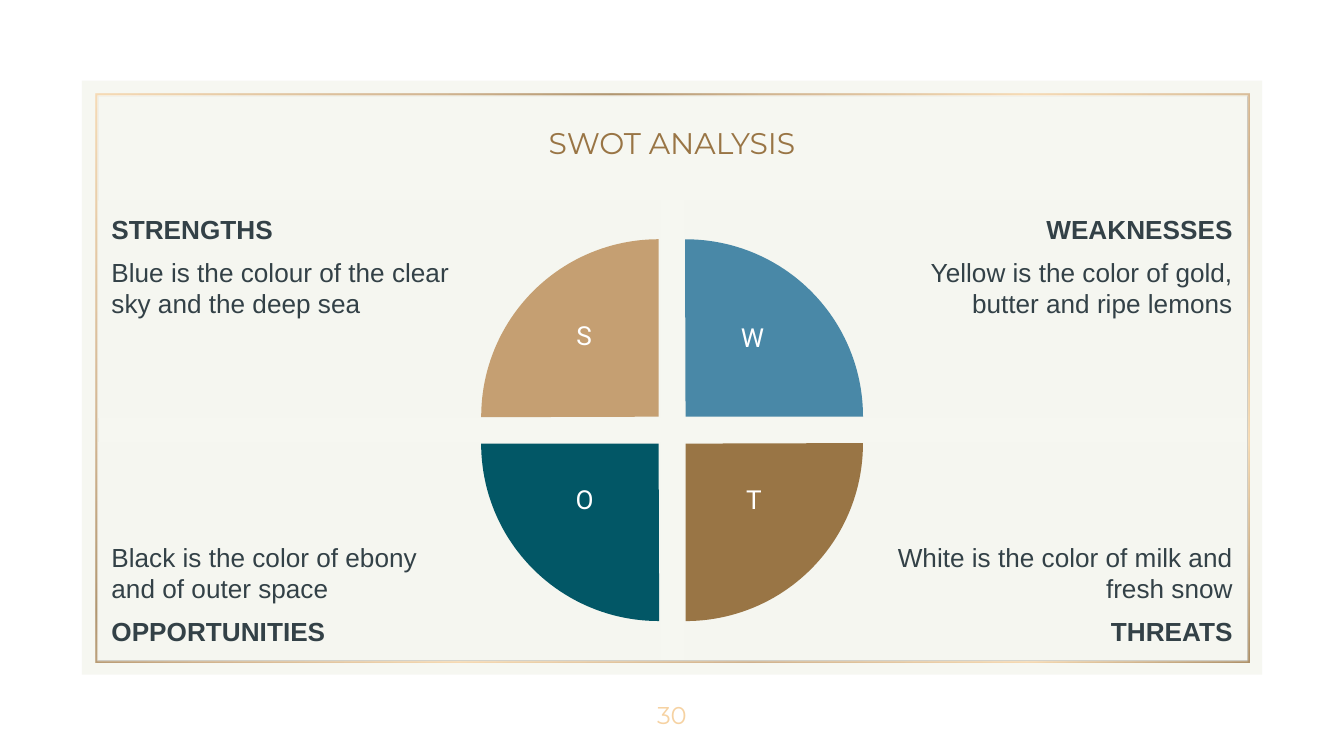
from lxml import etree
from pptx import Presentation, util as u
from pptx.dml.color import RGBColor
from pptx.enum import shapes, text
from pptx.oxml import ns

Pt = u.Pt
SHAPE = shapes.MSO_SHAPE
ALIGN = text.PP_ALIGN
ANCHOR = text.MSO_ANCHOR
COLORS = {"paper": "F5F6F0", "cream": "F6D2A2", "gold": "C59F72", "bronze": "997545",
          "blue": "4988A7", "teal": "025766", "ink": "334147", "white": "FFFFFF"}


def add_box(kind, left, top, width, height, color, alpha=100):
    """Add a borderless filled shape; alpha is its opacity in percent."""
    box = page.shapes.add_shape(kind, Pt(left), Pt(top), Pt(width), Pt(height))
    box.shadow.inherit = False
    box.line.fill.background()
    box.fill.solid()
    box.fill.fore_color.rgb = RGBColor.from_string(COLORS[color])
    if alpha < 100:
        tint = box.fill._xPr.find(".//" + ns.qn("a:srgbClr"))
        etree.SubElement(tint, ns.qn("a:alpha"), val=str(alpha * 1000))
    return box


def write(box, lines, font, size, color, align, anchor, insets, wrap=True):
    """Fill a box with (text, bold) lines."""
    frame = box.text_frame
    frame.word_wrap = wrap
    frame.vertical_anchor = anchor
    for side, inset in zip(("left", "top", "right", "bottom"), insets):
        setattr(frame, "margin_" + side, Pt(inset))
    for i, (words, bold) in enumerate(lines):
        para = frame.add_paragraph() if i else frame.paragraphs[0]
        para.alignment = align
        if i:
            para.space_before = para.space_after = Pt(6)
        span = para.add_run()
        span.text = words
        for name, value in {"name": font, "size": Pt(size), "bold": bold}.items():
            setattr(span.font, name, value)
        span.font.color.rgb = RGBColor.from_string(COLORS[color])


deck = Presentation()
deck.slide_width, deck.slide_height = Pt(720), Pt(405)
page = deck.slides.add_slide(deck.slide_layouts[6])

# Panel with a thin gold border
add_box(SHAPE.RECTANGLE, 43.9, 43.2, 632.2, 318.2, "paper", 87)
border = add_box(SHAPE.FRAME, 51, 50.2, 618.2, 304.6, "gold")
border.adjustments[0] = 0.004
border.fill.gradient()
gradient = border.fill._xPr.find(ns.qn("a:gradFill"))
for child in list(gradient):
    gradient.remove(child)
stops = etree.SubElement(gradient, ns.qn("a:gsLst"))
for place, color in [(0, "cream"), (20, "gold"), (30, "bronze"), (39, "gold"),
                     (54, "cream"), (71, "gold"), (87, "cream"), (100, "bronze")]:
    stop = etree.SubElement(stops, ns.qn("a:gs"), pos=str(place * 1000))
    tint = etree.SubElement(stop, ns.qn("a:srgbClr"), val=COLORS[color])
    etree.SubElement(tint, ns.qn("a:alpha"), val="80000")
etree.SubElement(gradient, ns.qn("a:lin"), ang=str(45 * 60000), scaled="0")

# Title and page number
for words, size, color, spacing, place in [
        ("SWOT ANALYSIS", 16, "bronze", 0.9, (82.1, 50.4, 555.8, 54.7)),
        ("30", 13, "cream", 1, (338.4, 361.4, 43.2, 43.2))]:
    box = page.shapes.add_textbox(*map(Pt, place))
    write(box, [(words, False)], "Montserrat", size, color, ALIGN.CENTER, ANCHOR.MIDDLE, [0] * 4)
    box.text_frame.paragraphs[0].line_spacing = spacing

# Four text cards: column, row, heading, body
for column, row, heading, body in [
        (0, 0, "STRENGTHS", "Blue is the colour of the clear sky and the deep sea"),
        (1, 0, "WEAKNESSES", "Yellow is the color of gold, butter and ripe lemons"),
        (0, 1, "OPPORTUNITIES", "Black is the color of ebony and of outer space"),
        (1, 1, "THREATS", "White is the color of milk and fresh snow")]:
    card = add_box(SHAPE.RECTANGLE, 52.6 + 313.9 * column, 107.3 + 129.6 * row,
                   301, 116.6, "paper", 87)
    lines = [(heading, True), (body, False)]
    if row:
        lines.reverse()
    insets = (108, 7.2, 7.2, 7.2) if column else (7.2, 7.2, 108, 7.2)
    write(card, lines, "Arial", 14, "ink", ALIGN.RIGHT if column else ALIGN.LEFT,
          ANCHOR.BOTTOM if row else ANCHOR.TOP, insets)

# Quarter circles, clockwise from the top left
for turn, (column, row, color) in enumerate([
        (0, 0, "gold"), (1, 0, "blue"), (1, 1, "bronze"), (0, 1, "teal")]):
    quarter = add_box(SHAPE.PIE, 257.8 + 14.4 * column, 128.2 + 14.4 * row, 190.1, 190.1, color)
    quarter.adjustments[0], quarter.adjustments[1] = 107.89, 162
    quarter.rotation = 90 * turn

for letter, left, top, width in [("S", 301.7, 167.8, 20.2), ("W", 381.6, 168.5, 43.2),
                                 ("O", 298.8, 255.6, 28.8), ("T", 391, 255.6, 25.9)]:
    box = page.shapes.add_textbox(Pt(left), Pt(top), Pt(width), Pt(32.8))
    write(box, [(letter, False)], "Roboto", 14, "white", ALIGN.CENTER, ANCHOR.TOP,
          (7.2, 3.6, 7.2, 3.6), wrap=False)

deck.save("out.pptx")
